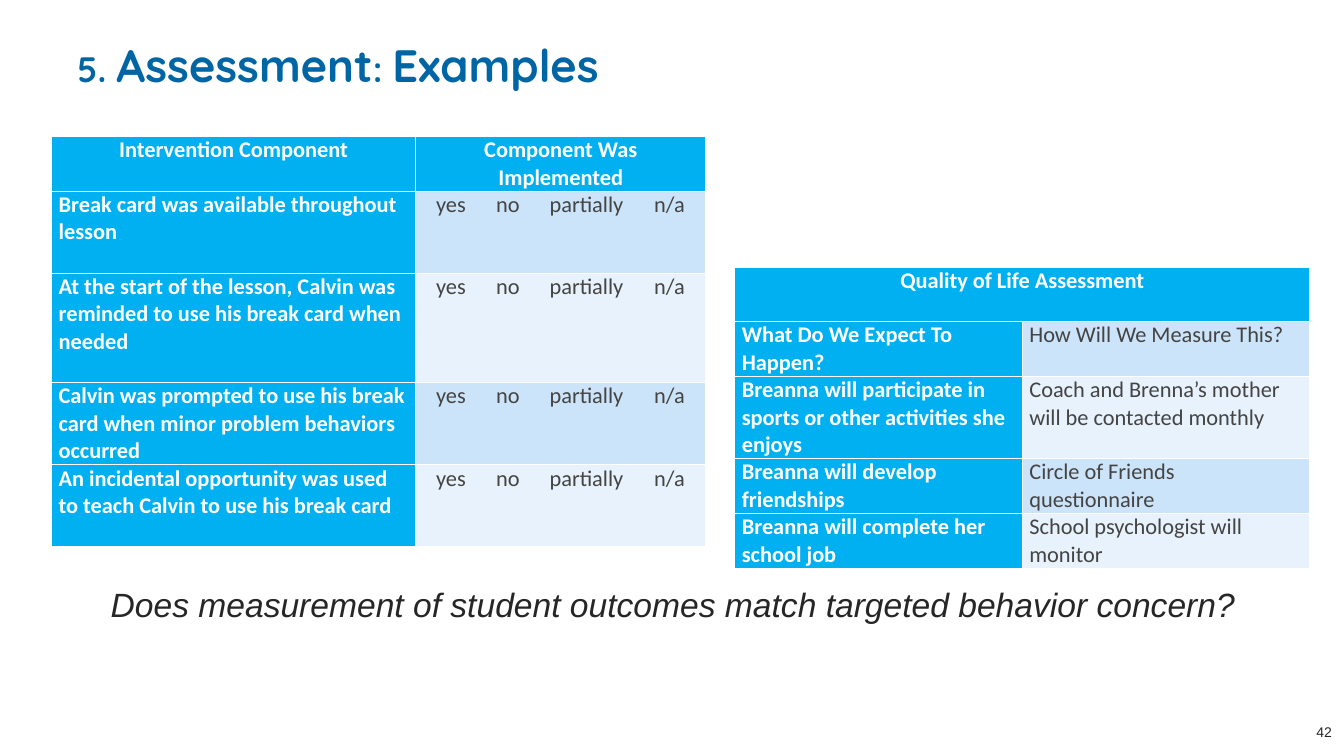
from dataclasses import dataclass

from lxml import etree
from pptx import Presentation
from pptx.dml.color import RGBColor
from pptx.enum import text as txt
from pptx.oxml import ns
from pptx.util import Pt


@dataclass(frozen=True)
class Theme:
    title: str = "0065A4"
    ink: str = "262626"
    white: str = "FFFFFF"
    grey: str = "444444"
    head: str = "00B0F0"
    bands: tuple = ("CCE4F9", "E7F2FC")
    big: float = 32.4
    small: float = 25.2
    ask: float = 24
    cell: float = 16
    page: float = 10


@dataclass(frozen=True)
class Grid:
    left: float
    top: float
    cols: tuple
    heights: tuple
    header: tuple
    rows: tuple


THEME = Theme()
TABS = (42.9, 81.1, 155.8)
INSET = 5
CHOICE_INSET = 14.6
CHOICES = "yes\tno\tpartially\tn/a"

FIDELITY = Grid(
    36.9, 97.4, (260, 207.4), (38.2, 58.6, 78.1, 58.6, 58.6),
    ("Intervention Component", "Component Was Implemented"),
    tuple((step, CHOICES) for step in (
        "Break card was available throughout lesson",
        "At the start of the lesson, Calvin was reminded to use his break card when needed",
        "Calvin was prompted to use his break card when minor problem behaviors occurred",
        "An incidental opportunity was used to teach Calvin to use his break card",
    )),
)
QUALITY = Grid(
    524.9, 190.8, (205.4, 205.4), (38.9, 38.2, 58.3, 38.2, 38.2),
    ("Quality of Life Assessment",),
    (
        ("What Do We Expect To Happen?", "How Will We Measure This?"),
        ("Breanna will participate in sports or other activities she enjoys",
         "Coach and Brenna’s mother will be contacted monthly"),
        ("Breanna will develop friendships", "Circle of Friends questionnaire"),
        ("Breanna will complete her school job", "School psychologist will monitor"),
    ),
)


def style(font, name: str, size: float, color: str, bold: bool = False) -> None:
    font.name, font.size, font.bold = name, Pt(size), bold
    font.color.rgb = RGBColor.from_string(color)


def add_tabs(para) -> None:
    tabs = etree.SubElement(para._p.get_or_add_pPr(), ns.qn("a:tabLst"))
    for stop in TABS:
        etree.SubElement(tabs, ns.qn("a:tab"), pos=str(int(Pt(stop))), algn="l")


def fill_cell(cell, words: str, fill: str, color: str, bold: bool, center: bool = False) -> None:
    cell.fill.solid()
    cell.fill.fore_color.rgb = RGBColor.from_string(fill)
    cell.margin_left = Pt(CHOICE_INSET if words == CHOICES else INSET)
    cell.margin_right = Pt(INSET)
    cell.margin_top = cell.margin_bottom = 0
    para = cell.text_frame.paragraphs[0]
    para.text = words
    if center:
        para.alignment = txt.PP_ALIGN.CENTER
    if words == CHOICES:
        add_tabs(para)
    style(para.font, "Calibri", THEME.cell, color, bold)


def add_grid(slide, grid: Grid) -> None:
    table = slide.shapes.add_table(
        len(grid.heights), len(grid.cols), Pt(grid.left), Pt(grid.top),
        Pt(sum(grid.cols)), Pt(sum(grid.heights))).table
    table.first_col = True
    for col, width in zip(table.columns, grid.cols):
        col.width = Pt(width)
    for row, height in zip(table.rows, grid.heights):
        row.height = Pt(height)
    # Header row, one cell wide or one cell per column
    if len(grid.header) == 1:
        table.cell(0, 0).merge(table.cell(0, len(grid.cols) - 1))
    for c, words in enumerate(grid.header):
        fill_cell(table.cell(0, c), words, THEME.head, THEME.white, True, center=True)
    # Label column and banded answers
    for r, (label, answer) in enumerate(grid.rows, 1):
        fill_cell(table.cell(r, 0), label, THEME.head, THEME.white, True)
        fill_cell(table.cell(r, 1), answer, THEME.bands[(r - 1) % 2], THEME.grey, False)


def add_title(slide) -> None:
    title = slide.shapes.title
    title.left, title.top, title.width, title.height = Pt(48), Pt(22.6), Pt(864), Pt(67)
    frame = title.text_frame
    frame.vertical_anchor = txt.MSO_ANCHOR.TOP
    para = frame.paragraphs[0]
    para.alignment = txt.PP_ALIGN.LEFT
    for words, size in (("5. ", THEME.small), ("Assessment", THEME.big),
                        (": ", THEME.small), ("Examples", THEME.big)):
        run = para.add_run()
        run.text = words
        style(run.font, "Quicksand", size, THEME.title, True)


def add_line(slide, words: str, box: tuple, size: float):
    frame = slide.shapes.add_textbox(*map(Pt, box)).text_frame
    frame.word_wrap = False
    para = frame.paragraphs[0]
    para.text = words
    style(para.font, "Arial", size, THEME.ink)
    return frame


def main() -> None:
    deck = Presentation()
    deck.slide_width, deck.slide_height = Pt(960), Pt(540)
    slide = deck.slides.add_slide(deck.slide_layouts[5])
    add_title(slide)

    # Assessment tables
    add_grid(slide, FIDELITY)
    add_grid(slide, QUALITY)

    # Closing question
    ask = add_line(slide, "Does measurement of student outcomes match targeted behavior concern?",
                   (72, 413.3, 825.8, 36), THEME.ask)
    ask.paragraphs[0].font.italic = True

    # Page number
    page = add_line(slide, "42", (931.4, 516.5, 20, 12), THEME.page)
    page.margin_left = page.margin_right = page.margin_top = page.margin_bottom = 0
    page.vertical_anchor = txt.MSO_ANCHOR.BOTTOM
    page.word_wrap = True
    page.paragraphs[0].alignment = txt.PP_ALIGN.RIGHT

    deck.save("out.pptx")


if __name__ == "__main__":
    main()
